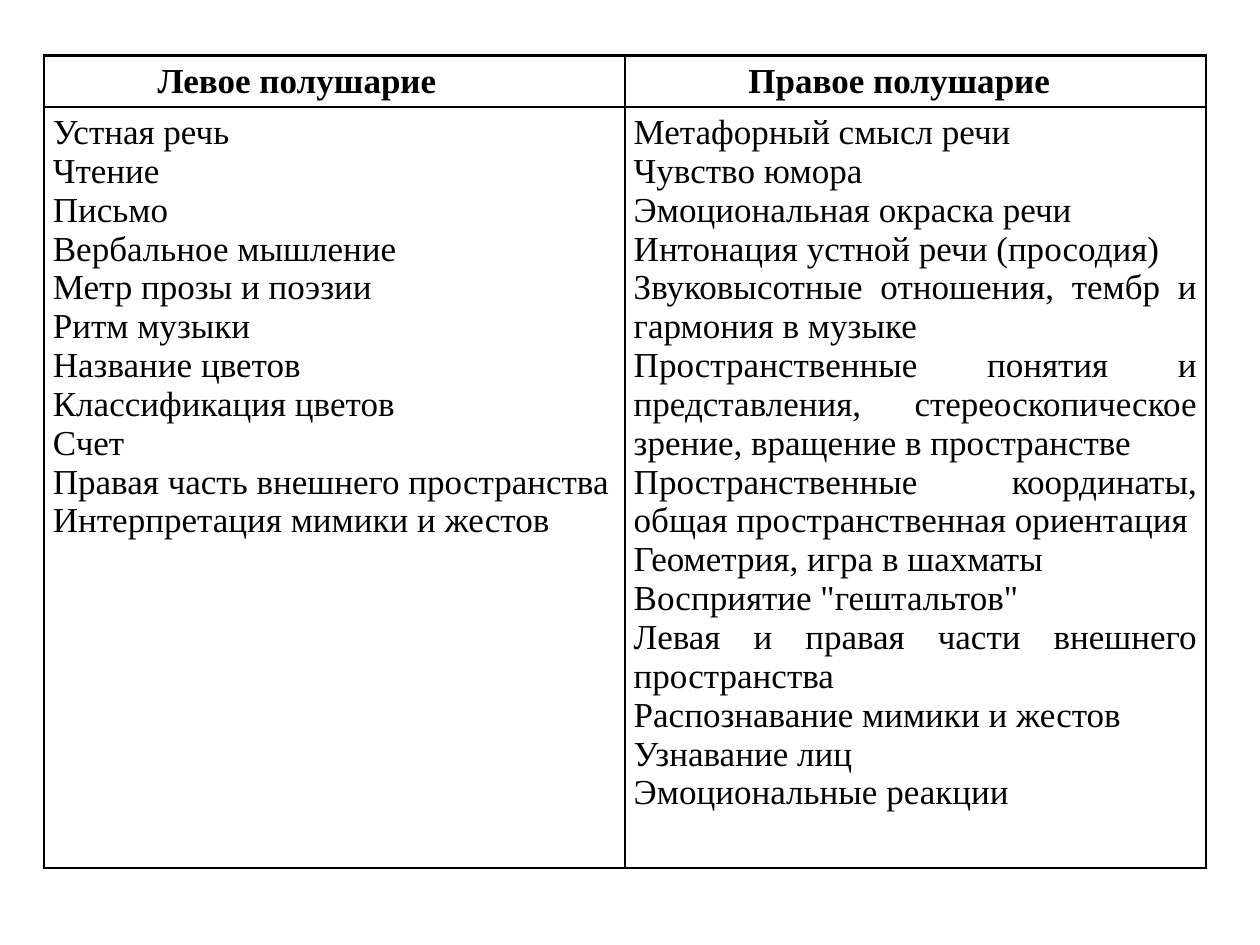
from lxml import etree
from pptx import Presentation
from pptx.dml.color import RGBColor
from pptx.enum import text
from pptx.oxml import ns
from pptx.util import Inches, Pt

COLORS = {"ink": "000000"}
FONT = "Times New Roman"
HEADS = [("Левое полушарие", 0.9), ("Правое полушарие", 0.98)]
LISTS = [
    [
        "Устная речь",
        "Чтение",
        "Письмо",
        "Вербальное мышление",
        "Метр прозы и поэзии",
        "Ритм музыки",
        "Название цветов",
        "Классификация цветов",
        "Счет",
        "Правая часть внешнего пространства",
        "Интерпретация мимики и жестов",
    ],
    [
        "Метафорный смысл речи",
        "Чувство юмора",
        "Эмоциональная окраска речи",
        "Интонация устной речи (просодия)",
        "Звуковысотные отношения, тембр и гармония в музыке",
        "Пространственные понятия и представления, стереоскопическое зрение, "
        "вращение в пространстве",
        "Пространственные координаты, общая пространственная ориентация",
        "Геометрия, игра в шахматы",
        'Восприятие "гештальтов"',
        "Левая и правая части внешнего пространства",
        "Распознавание мимики и жестов",
        "Узнавание лиц",
        "Эмоциональные реакции",
    ],
]


def border(cell, side, width):
    props = cell._tc.get_or_add_tcPr()
    line = etree.SubElement(props, ns.qn("a:ln" + side), w=str(Pt(width)))
    fill = etree.SubElement(line, ns.qn("a:solidFill"))
    etree.SubElement(fill, ns.qn("a:srgbClr"), val=COLORS["ink"])


deck = Presentation()
deck.slide_width, deck.slide_height = Inches(10), Inches(7.5)
slide = deck.slides.add_slide(deck.slide_layouts[6])

frame = slide.shapes.add_table(
    2, 2, Inches(0.35), Inches(0.44), Inches(9.22), Inches(6.44)
)
table = frame.table
table.first_row = table.horz_banding = False
for col in table.columns:
    col.width = Inches(4.61)
for row, height in zip(table.rows, (0.4, 6.04)):
    row.height = Inches(height)

for c, ((head, indent), items) in enumerate(zip(HEADS, LISTS)):
    for r, lines in enumerate(([head], items)):
        cell = table.cell(r, c)
        cell.margin_left = Inches(0.07 if r else indent)
        cell.margin_right = Inches(0.07)
        cell.margin_top = cell.margin_bottom = Inches(0.05)
        cell.text_frame.text = "\n".join(lines)
        for para in cell.text_frame.paragraphs:
            para.alignment = text.PP_ALIGN.JUSTIFY
            font = para.runs[0].font
            font.name, font.size, font.bold = FONT, Pt(20), r == 0
            font.color.rgb = RGBColor.from_string(COLORS["ink"])
        outer = {"L": c == 0, "R": c == 1, "T": r == 0, "B": r == 1}
        for side, edge in outer.items():
            border(cell, side, 1.5 if edge else 1)
        cell.fill.background()

deck.save("out.pptx")
